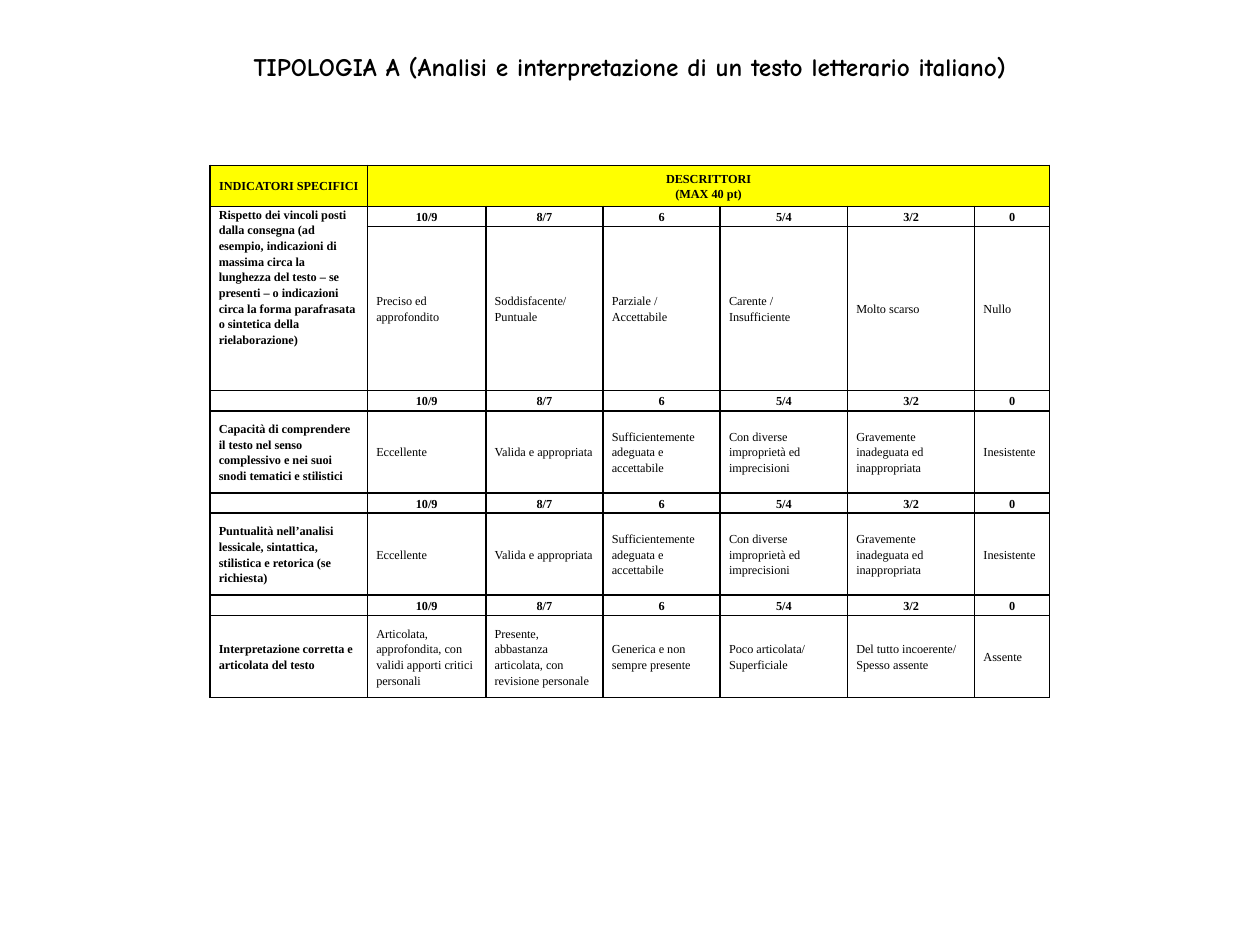
from lxml import etree
from pptx import Presentation, util as u
from pptx.dml.color import RGBColor
from pptx.enum import text
from pptx.oxml import ns

THEME = {
    "ink": "000000", "header": "FFFF00",
    "title_font": "Comic Neue", "title_size": 14.4,
    "table_font": "Times New Roman", "table_size": 7,
    "line_spacing": 1.15, "border": 1,
}
SCORES = ["10/9", "8/7", "6", "5/4", "3/2", "0"]
QUALITY = ["Eccellente", "Valida e appropriata",
           "Sufficientemente adeguata e accettabile",
           "Con diverse improprietà ed imprecisioni",
           "Gravemente inadeguata ed inappropriata", "Inesistente"]
# Each indicator with one descriptor per score
INDICATORS = [
    ("Rispetto dei vincoli posti dalla consegna (ad esempio, indicazioni di "
     "massima circa la lunghezza del testo – se presenti – o indicazioni circa "
     "la forma parafrasata o sintetica della rielaborazione)",
     ["Preciso ed approfondito", "Soddisfacente/\nPuntuale",
      "Parziale / Accettabile", "Carente /\nInsufficiente",
      "Molto scarso", "Nullo"]),
    ("Capacità di comprendere il testo nel senso complessivo e nei suoi snodi "
     "tematici e stilistici", QUALITY),
    ("Puntualità nell’analisi lessicale, sintattica, stilistica e retorica "
     "(se richiesta)", QUALITY),
    ("Interpretazione corretta e articolata del testo",
     ["Articolata, approfondita, con validi apporti critici personali",
      "Presente, abbastanza articolata, con revisione personale",
      "Generica e non sempre presente", "Poco articolata/\nSuperficiale",
      "Del tutto incoerente/\nSpesso assente", "Assente"]),
]


def style_run(run, font, size, bold):
    run.font.name, run.font.size, run.font.bold = font, u.Pt(size), bold
    run.font.color.rgb = RGBColor.from_string(THEME["ink"])


def add_borders(cell):
    properties = cell._tc.get_or_add_tcPr()
    for index, side in enumerate(("lnL", "lnR", "lnT", "lnB")):
        line = etree.Element(ns.qn(f"a:{side}"), w=str(u.Pt(THEME["border"])))
        fill = etree.SubElement(line, ns.qn("a:solidFill"))
        etree.SubElement(fill, ns.qn("a:srgbClr"), val=THEME["ink"])
        properties.insert(index, line)


presentation = Presentation()
presentation.slide_width, presentation.slide_height = u.Inches(10), u.Inches(7.5)
width, height = presentation.slide_width, presentation.slide_height
slide = presentation.slides.add_slide(presentation.slide_layouts[6])

# Title
title = slide.shapes.add_textbox(int(width * 0.05), int(height * 0.04),
                                 int(width * 0.9), int(height * 0.06))
title.text_frame.word_wrap = True
title.text_frame.vertical_anchor = text.MSO_ANCHOR.MIDDLE
title.text_frame.text = "TIPOLOGIA A (Analisi e interpretazione di un testo letterario italiano)"
paragraph = title.text_frame.paragraphs[0]
paragraph.alignment = text.PP_ALIGN.CENTER
style_run(paragraph.runs[0], THEME["title_font"], THEME["title_size"], True)

# Table grid, in thousandths of the slide's width
unit = width // 1000
column_units = [125, 94, 93, 93, 101, 101, 59.5]
row_units = [32.5, 16.2, 130] + [16.2, 65] * 3
table = slide.shapes.add_table(
    len(row_units), len(column_units), width // 6, int(height * 0.175),
    int(sum(column_units) * unit), int(sum(row_units) * unit)).table
for column, size in zip(table.columns, column_units):
    column.width = int(size * unit)
for row, size in zip(table.rows, row_units):
    row.height = int(size * unit)

# Rows: a header, then scores and descriptors for each indicator
rows = [["INDICATORI SPECIFICI", "DESCRITTORI\n(MAX 40 pt)"] + [""] * 5]
for indicator, descriptors in INDICATORS:
    rows += [[""] + SCORES, [indicator] + descriptors]
rows[1][0], rows[2][0] = rows[2][0], ""   # first indicator spans both its rows
table.cell(0, 1).merge(table.cell(0, 6))
table.cell(1, 0).merge(table.cell(2, 0))

for r, values in enumerate(rows):
    for c, value in enumerate(values):
        cell = table.cell(r, c)
        cell.text = value
        cell.margin_left = cell.margin_right = u.Inches(0.07)
        cell.margin_top = cell.margin_bottom = 0
        top_aligned = (r, c) == (1, 0)
        cell.vertical_anchor = text.MSO_ANCHOR.TOP if top_aligned else text.MSO_ANCHOR.MIDDLE
        if r == 0:
            cell.fill.solid()
            cell.fill.fore_color.rgb = RGBColor.from_string(THEME["header"])
        else:
            cell.fill.background()
        add_borders(cell)
        is_score = r % 2 == 1 and c > 0
        for paragraph in cell.text_frame.paragraphs:
            centred = r == 0 or is_score
            paragraph.alignment = text.PP_ALIGN.CENTER if centred else text.PP_ALIGN.LEFT
            paragraph.line_spacing = THEME["line_spacing"]
            for run in paragraph.runs:
                style_run(run, THEME["table_font"], THEME["table_size"], centred or c == 0)
            # Keeps empty cells as low as their row
            etree.SubElement(paragraph._p, ns.qn("a:endParaRPr"),
                             sz=str(THEME["table_size"] * 100))

presentation.save("out.pptx")
